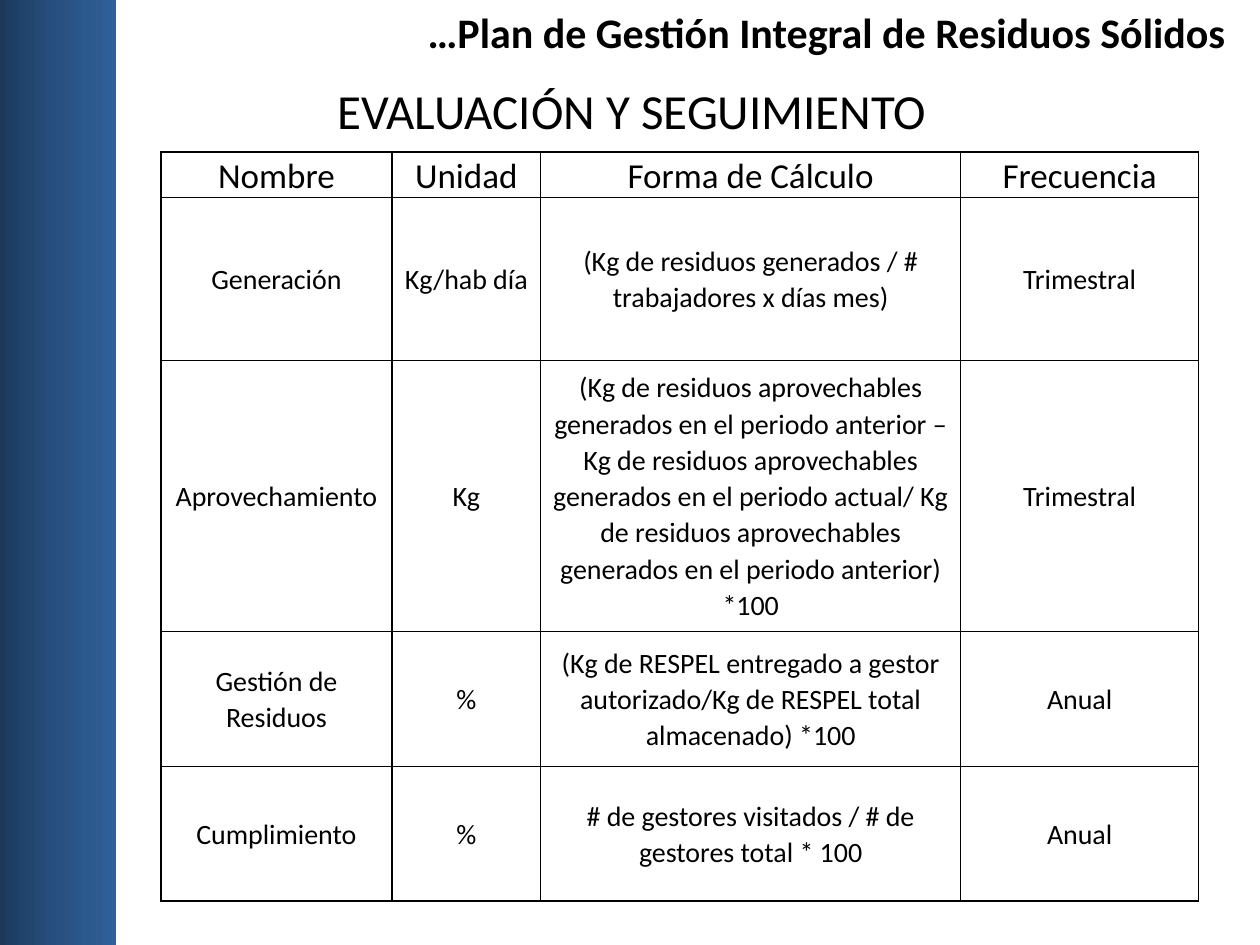
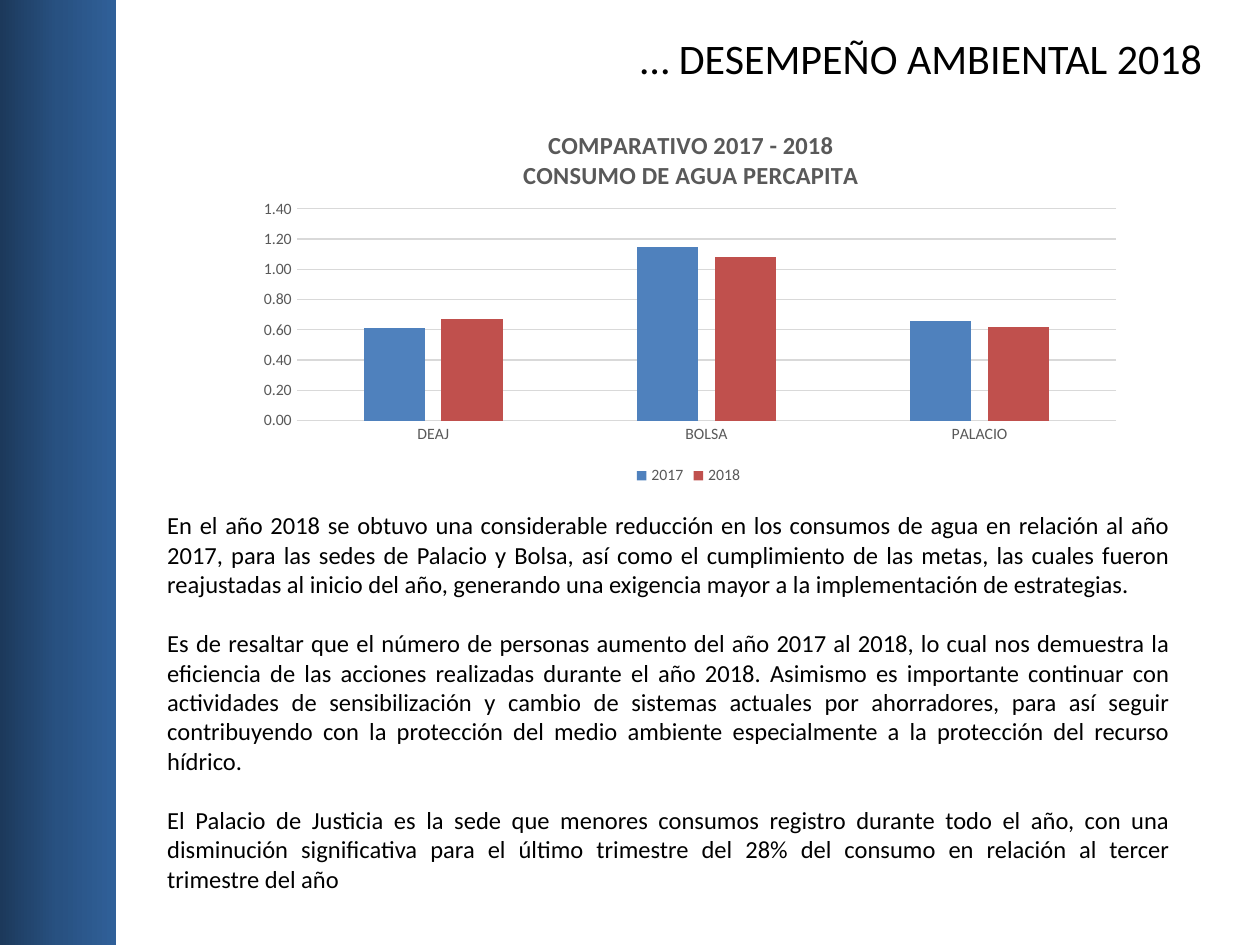
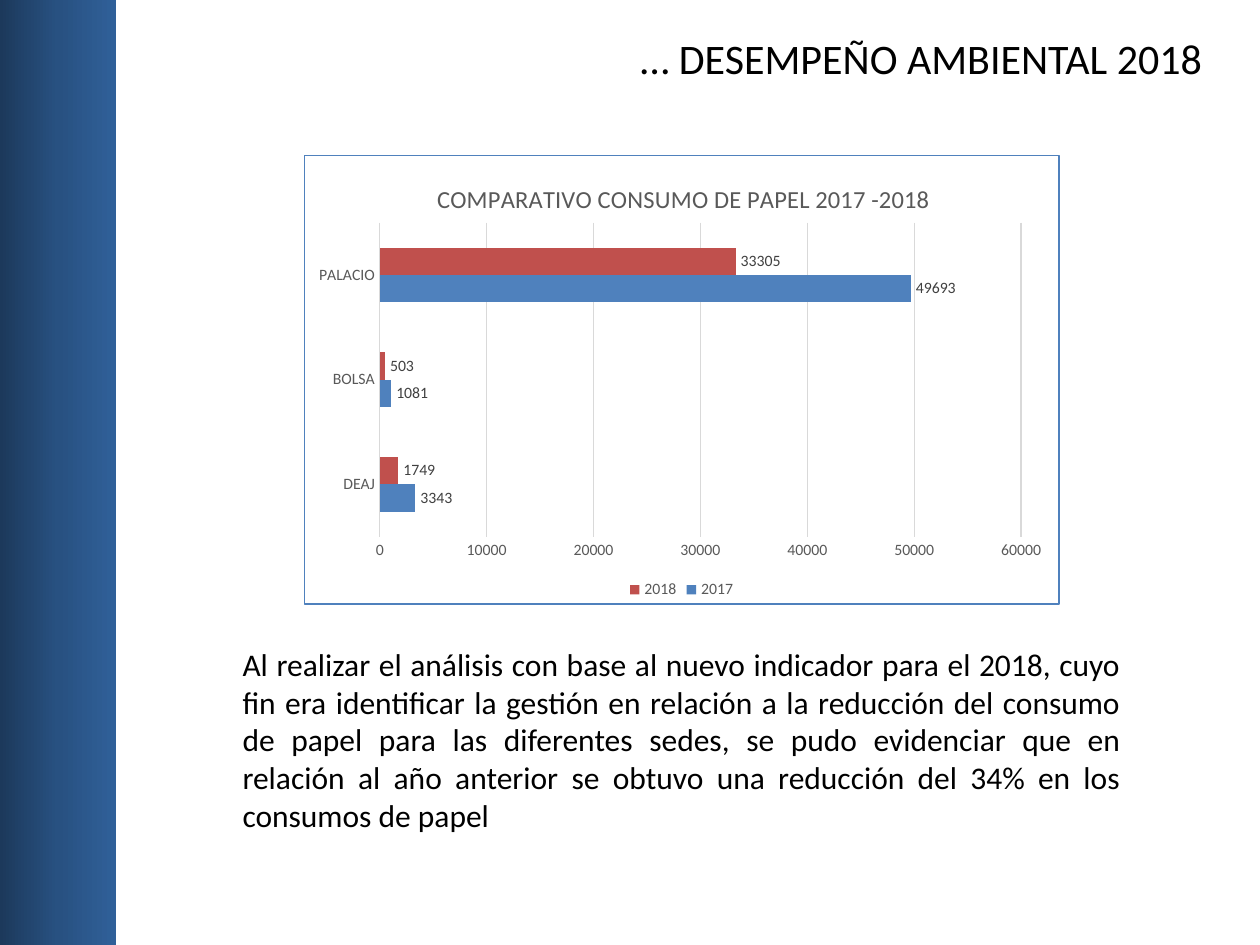
from dataclasses import dataclass
from typing import Any, Optional

from lxml.etree import SubElement
from pptx import Presentation
from pptx.chart.data import CategoryChartData
from pptx.dml.color import RGBColor
from pptx.enum.chart import (XL_CHART_TYPE, XL_LABEL_POSITION,
                             XL_LEGEND_POSITION, XL_TICK_MARK)
from pptx.enum.shapes import MSO_SHAPE
from pptx.enum.text import MSO_ANCHOR, PP_ALIGN
from pptx.oxml import parse_xml
from pptx.oxml.ns import nsdecls, qn
from pptx.util import Pt


@dataclass(frozen=True)
class Theme:
    font: str = "Calibri"
    text: str = "000000"
    muted: str = "595959"
    label: str = "404040"
    grid: str = "D9D9D9"
    border: str = "4F81BD"
    series: tuple[str, ...] = ("4F81BD", "C0504D")
    band: tuple[str, ...] = ("1C395B", "285181", "306099")
    section: int = 28
    title: int = 24
    head: int = 20
    lead: int = 18
    cell: int = 16
    body: int = 14
    small: int = 9


THEME = Theme()


@dataclass(frozen=True)
class Box:
    left: float
    top: float
    width: float
    height: float

    def lengths(self) -> tuple[Pt, ...]:
        return tuple(Pt(v) for v in (self.left, self.top, self.width, self.height))


@dataclass(frozen=True)
class TextSpec:
    box: Box
    paragraphs: tuple[str, ...]
    size: int
    align: PP_ALIGN
    bold: bool = False
    gap: float = 0


@dataclass(frozen=True)
class ChartSpec:
    box: Box
    kind: XL_CHART_TYPE
    title: tuple[str, ...]
    title_at: dict[str, float]
    plot_at: dict[str, float]
    values: dict[str, tuple[float, ...]]
    number_format: str
    maximum: float
    unit: float
    gap: int
    overlap: int = 0
    bold_title: bool = False
    labels: bool = False
    border: Optional[str] = None


def assign(target: Any, **values: Any) -> None:
    for name, value in values.items():
        setattr(target, name, value)


def style_font(font: Any, size: int, color: str, bold: bool = False) -> None:
    assign(font, name=THEME.font, size=Pt(size), bold=bold)
    font.color.rgb = RGBColor.from_string(color)


def style_line(line: Any, color: str) -> None:
    line.color.rgb = RGBColor.from_string(color)
    line.width = Pt(0.75)


def add_band(s: Any) -> None:
    """Gradient strip along the left edge."""
    sp = s.shapes.add_shape(MSO_SHAPE.RECTANGLE, *Box(0, 0, 66.5, 540).lengths())
    sp.shadow.inherit = False
    sp.line.fill.background()
    sp.fill.gradient()
    sp.fill.gradient_angle = 0
    stops = next(sp._element.iter(qn("a:gsLst")))
    for stop in list(stops):
        stops.remove(stop)
    for i, color in enumerate(THEME.band):
        stop = SubElement(stops, qn("a:gs"), pos=str(i * 50000))
        SubElement(stop, qn("a:srgbClr"), val=color)


def add_text(s: Any, spec: TextSpec) -> None:
    tf = s.shapes.add_textbox(*spec.box.lengths()).text_frame
    assign(tf, word_wrap=True, vertical_anchor=MSO_ANCHOR.TOP)
    for i, text in enumerate(spec.paragraphs):
        p = tf.paragraphs[0] if i == 0 else tf.add_paragraph()
        p.alignment = spec.align
        if i:
            p.space_before = Pt(spec.gap)
        r = p.add_run()
        r.text = text
        style_font(r.font, spec.size, THEME.text, spec.bold)


def add_borders(cell: Any) -> None:
    tc_pr = cell._tc.get_or_add_tcPr()
    for i, side in enumerate(("lnL", "lnR", "lnT", "lnB")):
        tc_pr.insert(i, parse_xml(
            f'<a:{side} {nsdecls("a")} w="{Pt(1)}"><a:solidFill>'
            f'<a:srgbClr val="{THEME.text}"/></a:solidFill></a:{side}>'))


def add_indicator_table(s: Any, box: Box, widths: tuple[float, ...],
                        heights: tuple[float, ...],
                        rows: tuple[tuple[str, ...], ...]) -> None:
    table = s.shapes.add_table(len(rows), len(widths), *box.lengths()).table
    assign(table, first_row=False, horz_banding=False)
    for column, width in zip(table.columns, widths):
        column.width = Pt(width)
    for i, (row, height) in enumerate(zip(rows, heights)):
        table.rows[i].height = Pt(height)
        for j, text in enumerate(row):
            cell = table.cell(i, j)
            cell.fill.background()
            assign(cell, text=text, vertical_anchor=MSO_ANCHOR.MIDDLE,
                   margin_left=Pt(5), margin_right=Pt(5),
                   margin_top=0, margin_bottom=0)
            p = cell.text_frame.paragraphs[0]
            assign(p, alignment=PP_ALIGN.CENTER, line_spacing=1.06)
            style_font(p.runs[0].font, THEME.cell if i else THEME.head, THEME.text)
            add_borders(cell)


def place(parent: Any, index: int, at: dict[str, float], inner: bool = False) -> None:
    """Give a chart part a fixed place, as fractions of the chart."""
    for old in parent.findall(qn("c:layout")):
        parent.remove(old)
    layout = parse_xml(f'<c:layout {nsdecls("c")}><c:manualLayout/></c:layout>')
    parent.insert(index, layout)
    target = {"layoutTarget": "inner"} if inner else {}
    for name, value in {**target, "xMode": "edge", "yMode": "edge", **at}.items():
        SubElement(layout[0], qn(f"c:{name}"), val=str(value))


def add_chart_title(chart: Any, spec: ChartSpec) -> None:
    tf = chart.chart_title.text_frame
    for i, text in enumerate(spec.title):
        p = tf.paragraphs[0] if i == 0 else tf.add_paragraph()
        r = p.add_run()
        r.text = text
        style_font(r.font, THEME.body, THEME.muted, spec.bold_title)
    place(chart.chart_title._element, 1, spec.title_at)


def style_axes(chart: Any, spec: ChartSpec) -> None:
    for axis in (chart.category_axis, chart.value_axis):
        assign(axis, major_tick_mark=XL_TICK_MARK.NONE,
               minor_tick_mark=XL_TICK_MARK.NONE)
        style_font(axis.tick_labels.font, THEME.small, THEME.muted)
    style_line(chart.category_axis.format.line, THEME.grid)
    axis = chart.value_axis
    assign(axis, minimum_scale=0, maximum_scale=spec.maximum,
           major_unit=spec.unit, has_major_gridlines=True)
    assign(axis.tick_labels, number_format=spec.number_format,
           number_format_is_linked=False)
    axis.format.line.fill.background()
    style_line(axis.major_gridlines.format.line, THEME.grid)


def add_comparison_chart(s: Any, spec: ChartSpec) -> None:
    data = CategoryChartData(number_format=spec.number_format)
    data.categories = ("DEAJ", "BOLSA", "PALACIO")
    for year, values in spec.values.items():
        data.add_series(year, values)
    chart = s.shapes.add_chart(spec.kind, *spec.box.lengths(), data).chart
    style_font(chart.font, 10, THEME.text)
    add_chart_title(chart, spec)
    style_axes(chart, spec)
    chart.has_legend = True
    assign(chart.legend, position=XL_LEGEND_POSITION.BOTTOM, include_in_layout=False)
    style_font(chart.legend.font, THEME.small, THEME.muted)

    plot = chart.plots[0]
    assign(plot, gap_width=spec.gap, overlap=spec.overlap, vary_by_categories=False)
    for series, color in zip(plot.series, THEME.series):
        series.format.fill.solid()
        series.format.fill.fore_color.rgb = RGBColor.from_string(color)
        if spec.labels:
            labels = series.data_labels
            assign(labels, show_value=True, number_format=spec.number_format,
                   number_format_is_linked=False,
                   position=XL_LABEL_POSITION.OUTSIDE_END)
            style_font(labels.font, THEME.small, THEME.label)

    root = chart._chartSpace
    place(next(root.iter(qn("c:plotArea"))), 0, spec.plot_at, inner=True)
    line = (f'<a:solidFill><a:srgbClr val="{spec.border}"/></a:solidFill>'
            if spec.border else "<a:noFill/>")
    root.find(qn("c:chart")).addnext(parse_xml(
        f'<c:spPr {nsdecls("c", "a")}><a:noFill/>'
        f'<a:ln w="{Pt(0.75)}">{line}</a:ln></c:spPr>'))


INDICATORS = (
    ("Nombre", "Unidad", "Forma de Cálculo", "Frecuencia"),
    ("Generación", "Kg/hab día",
     "(Kg de residuos generados / # trabajadores x días mes)", "Trimestral"),
    ("Aprovechamiento", "Kg",
     "(Kg de residuos aprovechables generados en el periodo anterior – Kg de "
     "residuos aprovechables generados en el periodo actual/ Kg de residuos "
     "aprovechables generados en el periodo anterior) *100", "Trimestral"),
    ("Gestión de Residuos", "%",
     "(Kg de RESPEL entregado a gestor autorizado/Kg de RESPEL total "
     "almacenado) *100", "Anual"),
    ("Cumplimiento", "%",
     "# de gestores visitados / # de gestores total * 100", "Anual"),
)

PERFORMANCE_TITLE = TextSpec(Box(46, 15, 648, 35), ("… DESEMPEÑO AMBIENTAL 2018",),
                             THEME.title, PP_ALIGN.RIGHT)

WATER_CHART = ChartSpec(
    box=Box(139, 60, 509, 220), kind=XL_CHART_TYPE.COLUMN_CLUSTERED,
    title=("COMPARATIVO 2017 - 2018", "CONSUMO DE AGUA PERCAPITA"),
    title_at={"x": 0.31, "y": 0.05},
    plot_at={"x": 0.06, "y": 0.27, "w": 0.92, "h": 0.55},
    values={"2017": (0.61, 1.15, 0.66), "2018": (0.67, 1.08, 0.62)},
    number_format="0.00", maximum=1.4, unit=0.2, gap=219, overlap=-27,
    bold_title=True)

WATER_TEXT = TextSpec(Box(88.5, 288, 587.5, 227.5), (
    "En el año 2018 se obtuvo una considerable reducción en los consumos de agua "
    "en relación al año 2017, para las sedes de Palacio y Bolsa, así como el "
    "cumplimiento de las metas, las cuales fueron reajustadas al inicio del año, "
    "generando una exigencia mayor a la implementación de estrategias.",
    "Es de resaltar que el número de personas aumento del año 2017 al 2018, lo cual "
    "nos demuestra la eficiencia de las acciones realizadas durante el año 2018. "
    "Asimismo es importante continuar con actividades de sensibilización y cambio "
    "de sistemas actuales por ahorradores, para así seguir contribuyendo con la "
    "protección del medio ambiente especialmente a la protección del recurso hídrico.",
    "El Palacio de Justicia es la sede que menores consumos registro durante todo "
    "el año, con una disminución significativa para el último trimestre del 28% del "
    "consumo en relación al tercer trimestre del año",
), THEME.body, PP_ALIGN.JUSTIFY, gap=17)

PAPER_CHART = ChartSpec(
    box=Box(173.5, 88.5, 432, 257), kind=XL_CHART_TYPE.BAR_CLUSTERED,
    title=("COMPARATIVO CONSUMO DE PAPEL 2017 -2018",),
    title_at={"x": 0.17, "y": 0.05},
    plot_at={"x": 0.1, "y": 0.15, "w": 0.85, "h": 0.7},
    values={"2017": (3343, 1081, 49693), "2018": (1749, 503, 33305)},
    number_format="0", maximum=60000, unit=10000, gap=182,
    labels=True, border=THEME.border)

PAPER_TEXT = TextSpec(Box(131.5, 365, 516, 117), (
    "Al realizar el análisis con base al nuevo indicador para el 2018, cuyo fin era "
    "identificar la gestión en relación a la reducción del consumo de papel para las "
    "diferentes sedes, se pudo evidenciar que en relación al año anterior se obtuvo "
    "una reducción del 34% en los consumos de papel",
), THEME.lead, PP_ALIGN.JUSTIFY)


def new_slide(prs: Any) -> Any:
    s = prs.slides.add_slide(prs.slide_layouts[6])
    add_band(s)
    return s


def build_evaluation(prs: Any) -> None:
    s = new_slide(prs)
    add_text(s, TextSpec(Box(37, 42.5, 648, 55), ("EVALUACIÓN Y SEGUIMIENTO",),
                         THEME.section, PP_ALIGN.CENTER))
    add_text(s, TextSpec(Box(92, 0, 615.5, 45),
                         ("…Plan de Gestión Integral de Residuos Sólidos",),
                         THEME.title, PP_ALIGN.RIGHT, bold=True))
    add_indicator_table(s, Box(92, 87, 593, 428), (132, 85, 240, 136),
                        (26, 93, 155, 77, 77), INDICATORS)


def build_performance(prs: Any, chart: ChartSpec, text: TextSpec) -> None:
    s = new_slide(prs)
    add_comparison_chart(s, chart)
    add_text(s, text)
    add_text(s, PERFORMANCE_TITLE)


def main() -> None:
    prs = Presentation()
    assign(prs, slide_width=Pt(720), slide_height=Pt(540))
    build_evaluation(prs)
    build_performance(prs, WATER_CHART, WATER_TEXT)
    build_performance(prs, PAPER_CHART, PAPER_TEXT)
    prs.save("out.pptx")


if __name__ == "__main__":
    main()
